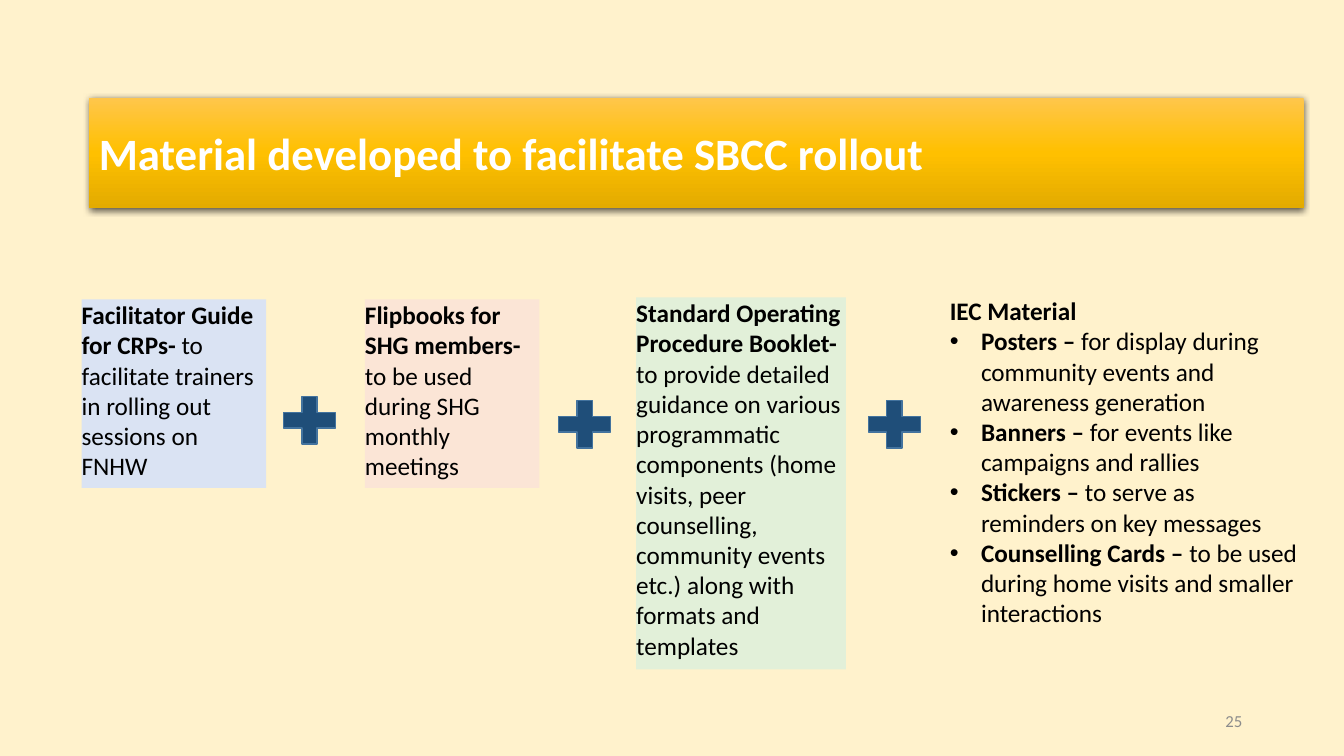
from pptx import Presentation
from pptx.dml.color import RGBColor
from pptx.enum.shapes import MSO_SHAPE as Shape
from pptx.enum.text import MSO_ANCHOR as Anchor, MSO_AUTO_SIZE as AutoSize, PP_ALIGN as Align
from pptx.oxml import parse_xml
from pptx.oxml.ns import nsdecls
from pptx.util import Pt

PX = 9144
COLORS = {
    "background": "FFF2CC", "guide": "DAE3F3", "flipbook": "FBE5D6", "booklet": "E2F0D9",
    "plus": "1F4E79", "plus_line": "43739E", "text": "000000", "title": "FFFFFF",
    "number": "8C8C8C", "gold_top": "FFC64B", "gold": "FFC000", "gold_bottom": "E3AB00",
}


def color(name):
    return RGBColor.from_string(COLORS[name])


def write(shape, paragraphs, size=18, ink="text", align=Align.LEFT, anchor=Anchor.TOP,
          insets=(0, 0, 0, 5), auto_size=AutoSize.NONE, bullets=False):
    frame = shape.text_frame
    frame.word_wrap = True
    frame.auto_size = auto_size
    frame.vertical_anchor = anchor
    frame.margin_left, frame.margin_top, frame.margin_right, frame.margin_bottom = [
        inset * PX for inset in insets]
    for index, (strong, plain) in enumerate(paragraphs):
        paragraph = frame.paragraphs[0] if index == 0 else frame.add_paragraph()
        properties = paragraph._p.get_or_add_pPr()
        bulleted = bullets and index > 0
        properties.set("marL", str(31 * PX if bulleted else 0))
        properties.set("indent", str(-31 * PX if bulleted else 0))
        if bulleted:
            properties.append(parse_xml(f'<a:buFont {nsdecls("a")} typeface="Arial"/>'))
            properties.append(parse_xml(f'<a:buChar {nsdecls("a")} char="•"/>'))
        else:
            properties.append(parse_xml(f'<a:buNone {nsdecls("a")}/>'))
        paragraph.alignment = align
        paragraph.space_before = Pt(0)
        for text, bold in ((strong, True), (plain, False)):
            if text:
                run = paragraph.add_run()
                run.text = text
                run.font.name = "Calibri"
                run.font.size = Pt(size)
                run.font.bold = bold
                run.font.color.rgb = color(ink)


def place(shape, left, top, width, height):
    shape.left, shape.top, shape.width, shape.height = [
        length * PX for length in (left, top, width, height)]


presentation = Presentation()
presentation.slide_width = 1333 * PX
presentation.slide_height = 750 * PX
slide = presentation.slides.add_slide(presentation.slide_layouts[1])
slide.background.fill.solid()
slide.background.fill.fore_color.rgb = color("background")

title = slide.shapes.title
place(title, 88, 97, 1205, 109)
write(title, [("Material developed to facilitate SBCC rollout", "")], size=32, ink="title",
      anchor=Anchor.MIDDLE, insets=(10, 5, 10, 5))
stops = "".join(
    f'<a:gs pos="{position}"><a:srgbClr val="{COLORS[name]}"/></a:gs>'
    for position, name in ((0, "gold_top"), (50000, "gold"), (100000, "gold_bottom")))
title_properties = title._element.spPr
title_properties.append(parse_xml(
    f'<a:gradFill {nsdecls("a")} rotWithShape="1"><a:gsLst>{stops}</a:gsLst>'
    '<a:lin ang="5400000" scaled="0"/></a:gradFill>'))
title_properties.append(parse_xml(
    f'<a:effectLst {nsdecls("a")}><a:outerShdw blurRad="{Pt(4.5)}" dist="{Pt(1.5)}" '
    f'dir="5400000" algn="ctr" rotWithShape="0"><a:srgbClr val="{COLORS["text"]}">'
    '<a:alpha val="63000"/></a:srgbClr></a:outerShdw></a:effectLst>'))

cards = [
    ((81, 297, 183, 187), "guide", "Facilitator Guide for CRPs- ",
     "to facilitate trainers in rolling out sessions on FNHW"),
    ((362, 297, 173, 187), "flipbook", "Flipbooks for SHG members- ",
     "to be used during SHG monthly meetings"),
    ((631, 295, 208, 369), "booklet", "Standard Operating Procedure Booklet- ",
     "to provide detailed guidance on various programmatic components (home visits, "
     "peer counselling, community events etc.) along with formats and templates"),
]
for box, fill, strong, plain in cards:
    card = slide.shapes.add_textbox(*[length * PX for length in box])
    card.fill.solid()
    card.fill.fore_color.rgb = color(fill)
    write(card, [(strong, plain)], auto_size=AutoSize.SHAPE_TO_FIT_TEXT)

materials = slide.placeholders[1]
place(materials, 942, 293, 352, 338)
materials.fill.solid()
materials.fill.fore_color.rgb = color("background")
write(materials, [
    ("IEC Material", ""),
    ("Posters – ", "for display during community events and awareness generation"),
    ("Banners – ", "for events like campaigns and rallies"),
    ("Stickers – ", "to serve as reminders on key messages"),
    ("Counselling Cards – ", "to be used during home visits and smaller interactions"),
], auto_size=AutoSize.SHAPE_TO_FIT_TEXT, bullets=True)

for left, top in ((272, 385), (545, 389), (852, 389)):
    plus = slide.shapes.add_shape(Shape.MATH_PLUS, left * PX, top * PX, 70 * PX, 64 * PX)
    plus.shadow.inherit = False
    plus.fill.solid()
    plus.fill.fore_color.rgb = color("plus")
    plus.line.color.rgb = color("plus_line")
    plus.line.width = Pt(1)

number = slide.shapes.add_textbox(942 * PX, 695 * PX, 300 * PX, 40 * PX)
write(number, [("", "25")], size=12, ink="number", align=Align.RIGHT,
      anchor=Anchor.MIDDLE, insets=(10, 5, 10, 5))

presentation.save("out.pptx")
